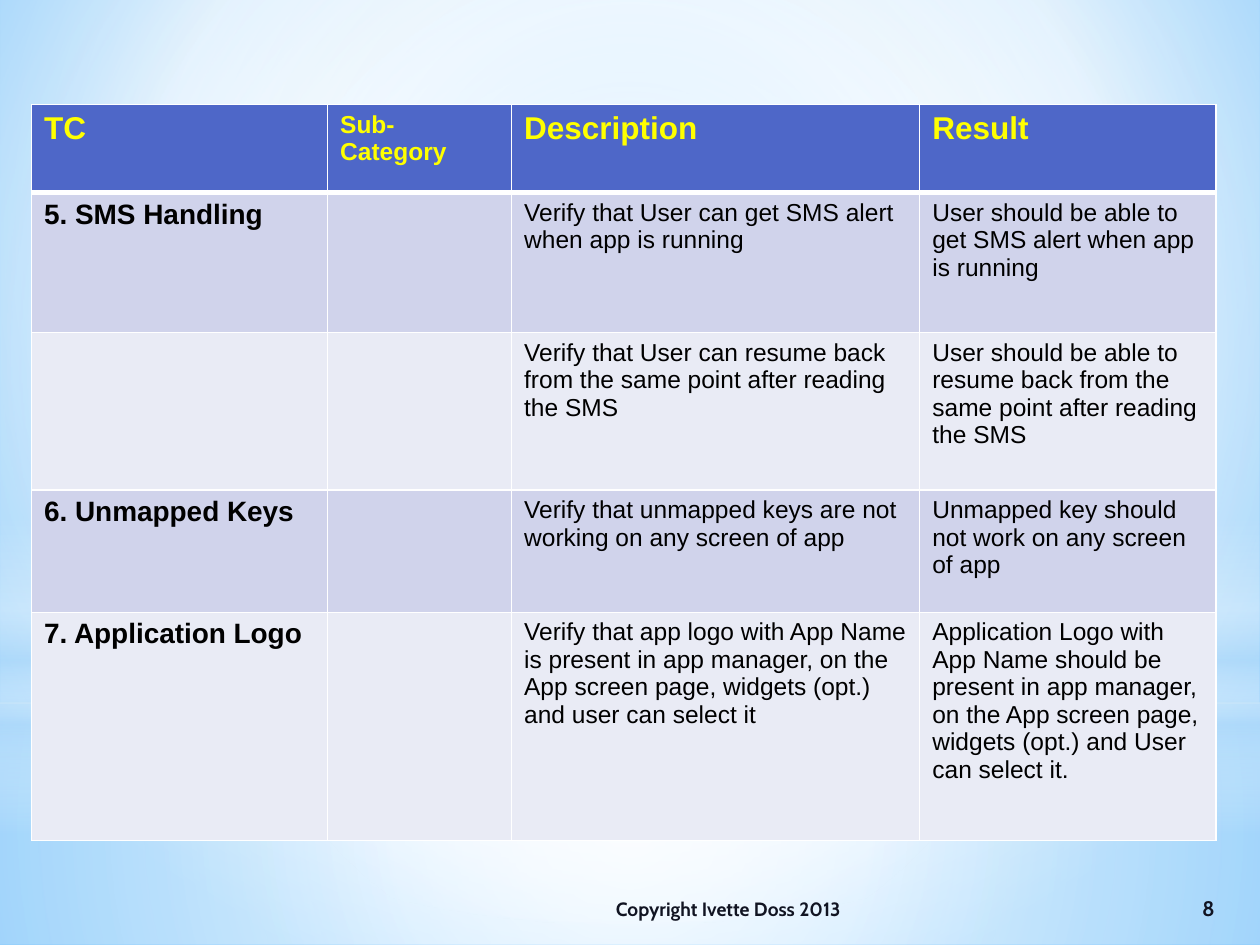
from dataclasses import dataclass

from lxml.etree import SubElement
from pptx import Presentation
from pptx.dml.color import RGBColor
from pptx.enum.shapes import MSO_SHAPE as Shape
from pptx.enum.text import MSO_ANCHOR as Anchor, PP_ALIGN as Align
from pptx.oxml.ns import qn
from pptx.util import Inches, Pt


@dataclass(frozen=True)
class Theme:
    body_font: str = "Arial"
    footer_font: str = "Cabin"
    white: str = "FFFFFF"
    glow: str = "B4DCFA"
    sky: str = "9ED5FF"
    deep_sky: str = "5BB9FF"
    header: str = "4E67C8"
    header_text: str = "FFFF00"
    bands: tuple = ("D0D3EB", "E9EBF5")
    text: str = "000000"
    footer_text: str = "111422"
    heading_size: int = 18
    case_size: int = 16
    body_size: int = 14
    number_size: int = 12
    footer_size: int = 11


THEME = Theme()
CENTER = (50, 50, 50, 50)

COLUMNS = (2.35, 1.46, 3.24, 2.35)
ROWS = (0.7, 1.11, 1.25, 0.97, 1.81)
HEADINGS = ("TC", "Sub-Category", "Description", "Result")
TEST_CASES = (
    ("5. SMS Handling", "",
     "Verify that User can get SMS alert when app is running",
     "User should be able to get SMS alert when app is running"),
    ("", "",
     "Verify that User can resume back from the same point after reading the SMS",
     "User should be able to resume back from the same point after reading the SMS"),
    ("6. Unmapped Keys", "",
     "Verify that unmapped keys are not working on any screen of app",
     "Unmapped key should not work on any screen of app"),
    ("7. Application Logo", "",
     "Verify that app logo with App Name is present in app manager, on the App "
     "screen page, widgets (opt.) and user can select it",
     "Application Logo with App Name should be present in app manager, on the App "
     "screen page, widgets (opt.) and User can select it."),
)


def add_color(parent, color, opacity=100):
    element = SubElement(parent, qn("a:srgbClr"), val=color)
    if opacity < 100:
        SubElement(element, qn("a:alpha"), val=str(opacity * 1000))


def apply_gradient(properties, stops, focus=None):
    """Replace a solid fill by a gradient: circular around focus, else downward."""
    solid = properties.find(qn("a:solidFill"))
    gradient = SubElement(properties, qn("a:gradFill"), rotWithShape="1")
    properties.replace(solid, gradient)
    stop_list = SubElement(gradient, qn("a:gsLst"))
    for position, *color in stops:
        stop = SubElement(stop_list, qn("a:gs"), pos=str(position * 1000))
        add_color(stop, *color)
    if focus:
        circle = SubElement(gradient, qn("a:path"), path="circle")
        edges = {side: str(value * 1000) for side, value in zip("ltrb", focus)}
        SubElement(circle, qn("a:fillToRect"), **edges)
    else:
        SubElement(gradient, qn("a:lin"), ang="5400000", scaled="0")


def add_run(paragraph, text, font, size, color, bold):
    run = paragraph.add_run()
    run.text = text
    run.font.name = font
    run.font.size = Pt(size)
    run.font.bold = bold
    run.font.color.rgb = RGBColor.from_string(color)


def add_backdrop(slide):
    white, glow = THEME.white, THEME.glow
    slide.background.fill.solid()
    apply_gradient(
        slide.element.find(".//" + qn("p:bgPr")),
        ((0, THEME.sky), (60, white), (100, THEME.deep_sky)), (20, 10, 20, 60))
    layers = (
        (Shape.RECTANGLE, (0, 5.58, 10, 1.92),
         ((0, white, 91), (37, white, 76), (100, glow, 79)), CENTER),
        (Shape.RECTANGLE, (0, 0, 10, 5.58),
         ((0, white, 89), (48, white, 62), (100, glow, 79)), CENTER),
        (Shape.RECTANGLE, (0, 4.12, 10, 2.5),
         ((0, white, 0), (29, white, 30), (45, glow, 40), (55, white, 26),
          (65, glow, 60), (100, white, 0)), None),
        (Shape.OVAL, (0, 1.75, 10, 5.58),
         ((0, white), (56, white, 0)), CENTER),
    )
    for kind, box, stops, focus in layers:
        shape = slide.shapes.add_shape(kind, *map(Inches, box))
        shape.shadow.inherit = False
        shape.line.fill.background()
        shape.fill.solid()
        apply_gradient(shape.element.spPr, stops, focus)


def set_borders(cell, is_header, below_header):
    properties = cell._tc.get_or_add_tcPr()
    widths = {"L": 1, "R": 1, "T": 3 if below_header else 1,
              "B": 3 if is_header else 1}
    for position, (side, width) in enumerate(widths.items()):
        line = SubElement(properties, qn(f"a:ln{side}"), w=str(Pt(width)))
        add_color(SubElement(line, qn("a:solidFill")), THEME.white)
        properties.insert(position, line)


def add_test_table(slide, box):
    records = (HEADINGS, *TEST_CASES)
    table = slide.shapes.add_table(
        len(ROWS), len(COLUMNS), *map(Inches, box)).table
    for column, width in zip(table.columns, COLUMNS):
        column.width = Inches(width)
    for r, (record, height) in enumerate(zip(records, ROWS)):
        table.rows[r].height = Inches(height)
        is_header = r == 0
        fill = THEME.header if is_header else THEME.bands[(r - 1) % 2]
        color = THEME.header_text if is_header else THEME.text
        for c, text in enumerate(record):
            cell = table.cell(r, c)
            cell.fill.solid()
            cell.fill.fore_color.rgb = RGBColor.from_string(fill)
            set_borders(cell, is_header, r == 1)
            if is_header:
                size = THEME.body_size if c == 1 else THEME.heading_size
            else:
                size = THEME.case_size if c == 0 else THEME.body_size
            if text:
                add_run(cell.text_frame.paragraphs[0], text, THEME.body_font,
                        size, color, is_header or c == 0)


def add_footer_text(slide, box, text, size, alignment):
    frame = slide.shapes.add_textbox(*map(Inches, box)).text_frame
    frame.word_wrap = True
    frame.vertical_anchor = Anchor.MIDDLE
    paragraph = frame.paragraphs[0]
    paragraph.alignment = alignment
    add_run(paragraph, text, THEME.footer_font, size, THEME.footer_text, True)


def add_footer(slide, left, top, height):
    credit_width, number_width = 4.54, 0.52
    add_footer_text(slide, (left, top, credit_width, height),
                    "Copyright Ivette Doss 2013", THEME.footer_size, Align.LEFT)
    add_footer_text(slide, (left + credit_width, top, number_width, height),
                    "8", THEME.number_size, Align.CENTER)


def main():
    presentation = Presentation()
    presentation.slide_width = Inches(10)
    presentation.slide_height = Inches(7.5)
    slide = presentation.slides.add_slide(presentation.slide_layouts[6])
    add_backdrop(slide)
    add_test_table(slide, (0.25, 0.83, sum(COLUMNS), sum(ROWS)))
    add_footer(slide, 4.79, 7.01, 0.4)
    presentation.save("out.pptx")


if __name__ == "__main__":
    main()
